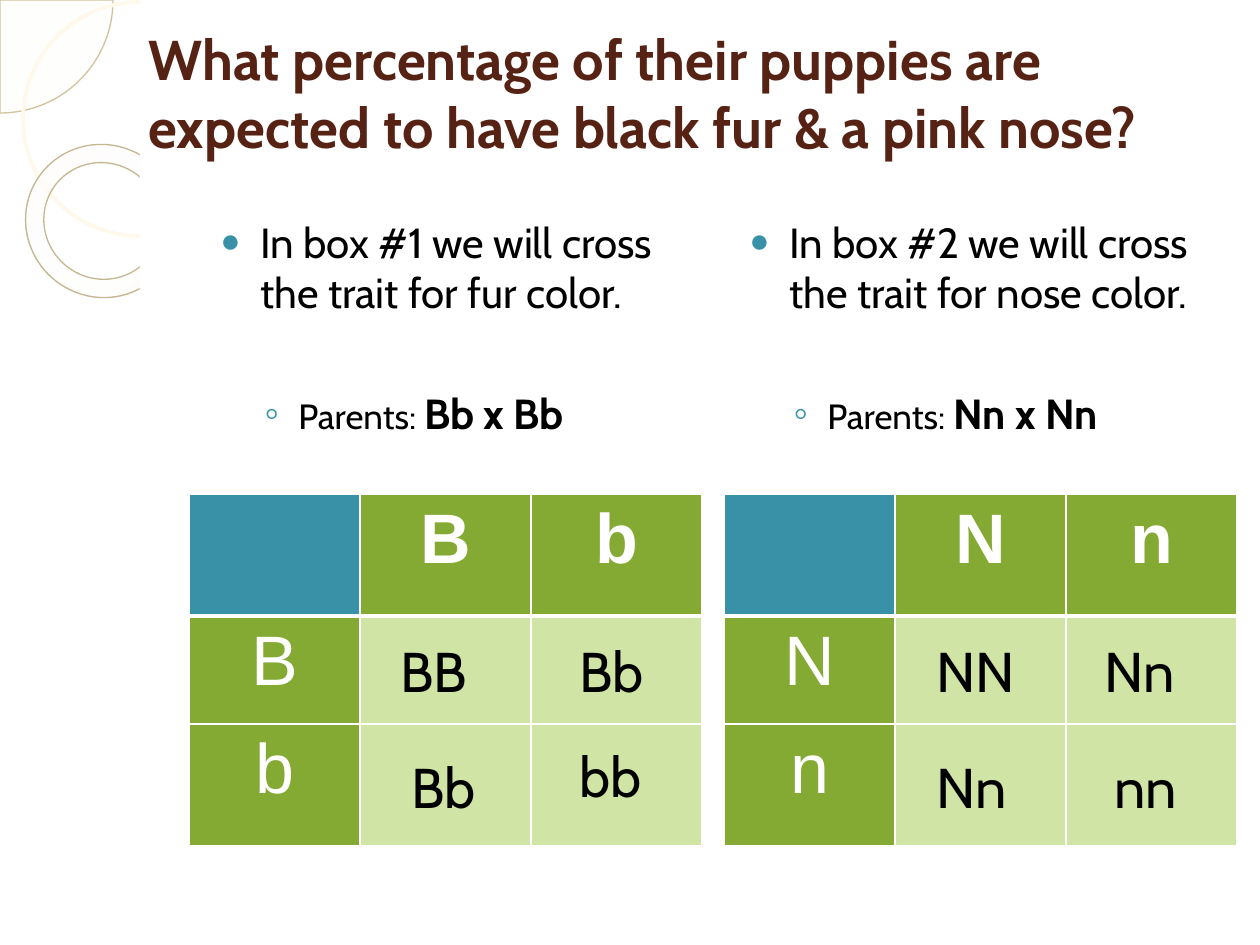
from lxml import etree
from pptx import Presentation, oxml, util as u
from pptx.dml.color import RGBColor
from pptx.enum import shapes, text
from pptx.oxml.ns import qn

SCALE = 914400 / 126  # EMU in one px
COLORS = {
    "title": "562214", "text": "000000", "white": "FFFFFF", "teal": "3891A7",
    "green": "84AA33", "light": "CFE4A5", "pie": "FEFCF8", "pie_line": "D2C29E",
    "ring": "FFF9EB", "donut_line": "C6B791",
}
DONUT_STOPS = [(0, "FFFDFB", 70), (70, "FFFFFE", 55), (100, "EED08D", 60)]
TITLE = "What percentage of their puppies are expected to have black fur & a pink nose?"

# shape, box in px, fill, line, line width in points
DECORATIONS = [
    ("PIE", (-113, -113, 226, 226), "pie", "pie_line", 0.75),
    ("OVAL", (23, 2, 234, 234), None, "ring", 2.15),
    ("DONUT", (25, 145, 155, 152), None, "donut_line", 0.75),
    ("RECTANGLE", (140, 0, 1120, 945), "white", None, 0),
    ("RECTANGLE", (140, 0, 10, 945), "white", None, 0),
]
CROSSES = [
    {"left": 198, "table": 189, "intro": "In box #1 we will cross the trait for fur color.",
     "parents": "Bb x Bb", "alleles": ["B", "b"],
     "offspring": [("BB", 388, 630), ("Bb", 567, 630), ("Bb", 399, 746), ("bb", 567, 735)]},
    {"left": 727, "table": 724, "intro": "In box #2 we will cross the trait for nose color.",
     "parents": "Nn x Nn", "alleles": ["N", "n"],
     "offspring": [("NN", 924, 630), ("Nn", 1092, 630), ("Nn", 924, 746), ("nn", 1102, 746)]},
]
BULLETS = {"●": (50, -40, 80), "◦": (88, -34, 120)}  # margin, indent, size in percent
TABLE_TOP, COLUMN_WIDTH, ROW_HEIGHTS = 494, 171, (122, 108, 122)


def px(*lengths):
    return [round(length * SCALE) for length in lengths]


def color(name):
    return RGBColor.from_string(COLORS[name])


def add_run(paragraph, words, size, name="text", bold=False, font="Cabin"):
    run = paragraph.add_run()
    run.text = words
    run.font.color.rgb = color(name)
    for key, value in {"size": u.Pt(size), "bold": bold, "name": font}.items():
        setattr(run.font, key, value)


def add_text_frame(slide, box, **settings):
    frame = slide.shapes.add_textbox(*px(*box)).text_frame
    for key, value in {"word_wrap": True, **settings}.items():
        setattr(frame, key, value)
    return frame


def add_bullet(paragraph, character):
    margin, indent, size = BULLETS[character]
    properties = paragraph._p.get_or_add_pPr()
    properties.set("marL", str(px(margin)[0]))
    properties.set("indent", str(px(indent)[0]))
    bullet_color = etree.SubElement(properties, qn("a:buClr"))
    etree.SubElement(bullet_color, qn("a:srgbClr"), val=COLORS["teal"])
    etree.SubElement(properties, qn("a:buSzPct"), val=str(size * 1000))
    etree.SubElement(properties, qn("a:buFont"), typeface="Arial")
    etree.SubElement(properties, qn("a:buChar"), char=character)


def add_decoration(slide, kind, box, fill, line, width):
    shape = slide.shapes.add_shape(getattr(shapes.MSO_SHAPE, kind), *px(*box))
    shape.shadow.inherit = False
    if fill:
        shape.fill.solid()
        shape.fill.fore_color.rgb = color(fill)
    else:
        shape.fill.background()
    if line:
        shape.line.color.rgb = color(line)
        shape.line.width = u.Pt(width)
    else:
        shape.line.fill.background()
    if kind == "PIE":
        shape.adjustments[0], shape.adjustments[1] = 0, 54  # quarter turn
        solid = shape._element.spPr.find(qn("a:solidFill"))
        etree.SubElement(solid[0], qn("a:alpha"), val="33000")
    if kind == "DONUT":
        shape.rotation = 38.6
        shape.adjustments[0] = 0.12
        fill_gradient(shape)


def fill_gradient(shape):
    stops = "".join(
        f'<a:gs pos="{place * 1000}"><a:srgbClr val="{value}">'
        f'<a:alpha val="{alpha * 1000}"/></a:srgbClr></a:gs>'
        for place, value, alpha in DONUT_STOPS)
    gradient = oxml.parse_xml(
        '<a:gradFill xmlns:a="http://schemas.openxmlformats.org/drawingml/2006/main">'
        f'<a:gsLst>{stops}</a:gsLst><a:path path="circle">'
        '<a:fillToRect r="100000" b="100000"/></a:path></a:gradFill>')
    properties = shape._element.spPr
    properties.replace(properties.find(qn("a:noFill")), gradient)


def style_cell(cell, fill, bottom_width):
    properties = cell._tc.get_or_add_tcPr()
    for side in "LRTB":
        width = bottom_width if side == "B" else 1
        border = etree.SubElement(properties, qn(f"a:ln{side}"), w=str(u.Pt(width)))
        solid = etree.SubElement(border, qn("a:solidFill"))
        etree.SubElement(solid, qn("a:srgbClr"), val=COLORS["white"])
    cell.fill.solid()
    cell.fill.fore_color.rgb = color(fill)


def add_punnett_square(slide, left, alleles):
    box = (left, TABLE_TOP, 3 * COLUMN_WIDTH, sum(ROW_HEIGHTS))
    table = slide.shapes.add_table(3, 3, *px(*box)).table
    table.horz_banding = False
    for column in table.columns:
        column.width = px(COLUMN_WIDTH)[0]
    labels = ["", *alleles]
    for r, height in enumerate(ROW_HEIGHTS):
        table.rows[r].height = px(height)[0]
        for c in range(3):
            cell = table.cell(r, c)
            inside = r > 0 and c > 0
            fill = "light" if inside else "green" if r + c else "teal"
            style_cell(cell, fill, 1 if r else 3)
            if r + c and not inside:
                paragraph = cell.text_frame.paragraphs[0]
                paragraph.alignment = text.PP_ALIGN.CENTER
                add_run(paragraph, labels[r + c], 40, "white", r == 0, "Arial")


def add_cross_text(slide, cross):
    frame = add_text_frame(slide, (cross["left"], 210, 504, 643))
    intro = frame.paragraphs[0]
    add_run(intro, cross["intro"], 24)
    add_bullet(intro, "●")
    parents = frame.add_paragraph()
    parents.level = 1
    parents.space_before = u.Pt(40.5)
    add_run(parents, "Parents: ", 20)
    add_run(parents, cross["parents"], 24, bold=True)
    add_bullet(parents, "◦")


def main():
    presentation = Presentation()
    presentation.slide_width, presentation.slide_height = px(1260, 945)
    slide = presentation.slides.add_slide(presentation.slide_layouts[6])
    for decoration in DECORATIONS:
        add_decoration(slide, *decoration)
    title = add_text_frame(slide, (136, 0, 1095, 252), margin_bottom=px(74)[0],
                           vertical_anchor=text.MSO_ANCHOR.MIDDLE)
    add_run(title.paragraphs[0], TITLE, 32, "title", True)
    for cross in CROSSES:
        add_cross_text(slide, cross)
    for cross in CROSSES:
        add_punnett_square(slide, cross["table"], cross["alleles"])
    for cross in CROSSES:
        for genotype, left, top in cross["offspring"]:
            label = add_text_frame(slide, (left, top, 116, 81))
            add_run(label.paragraphs[0], genotype, 32)
    presentation.save("out.pptx")


if __name__ == "__main__":
    main()
